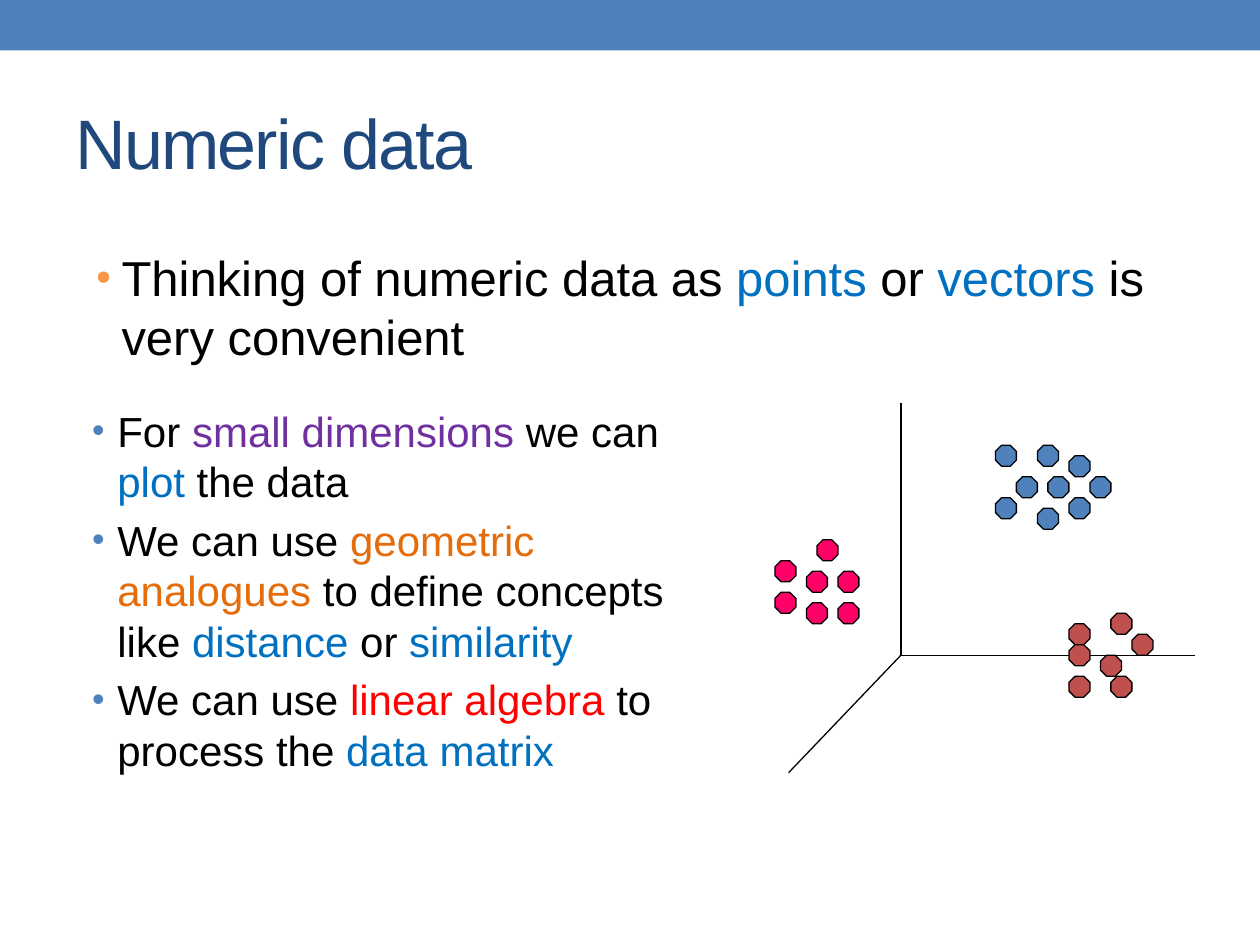
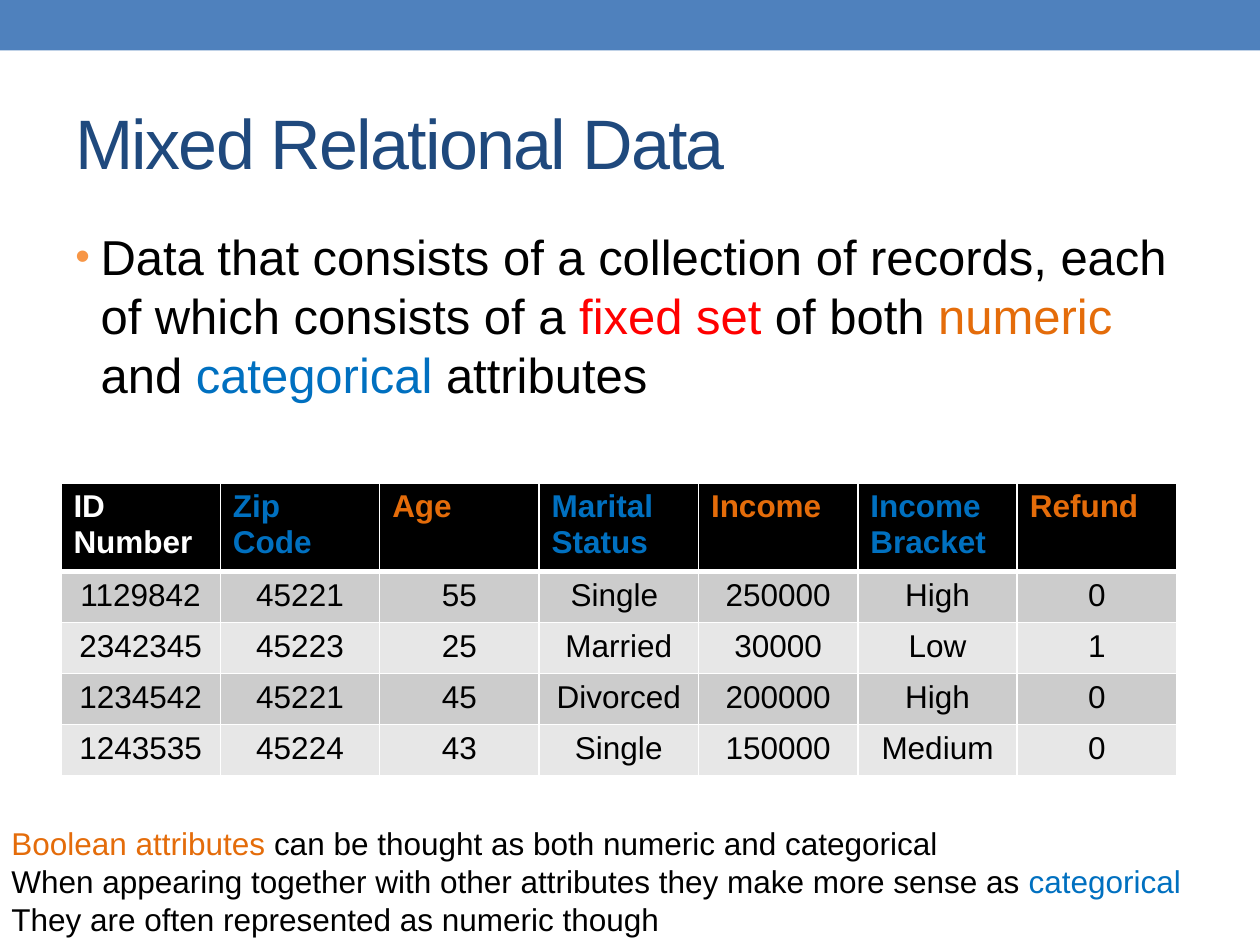
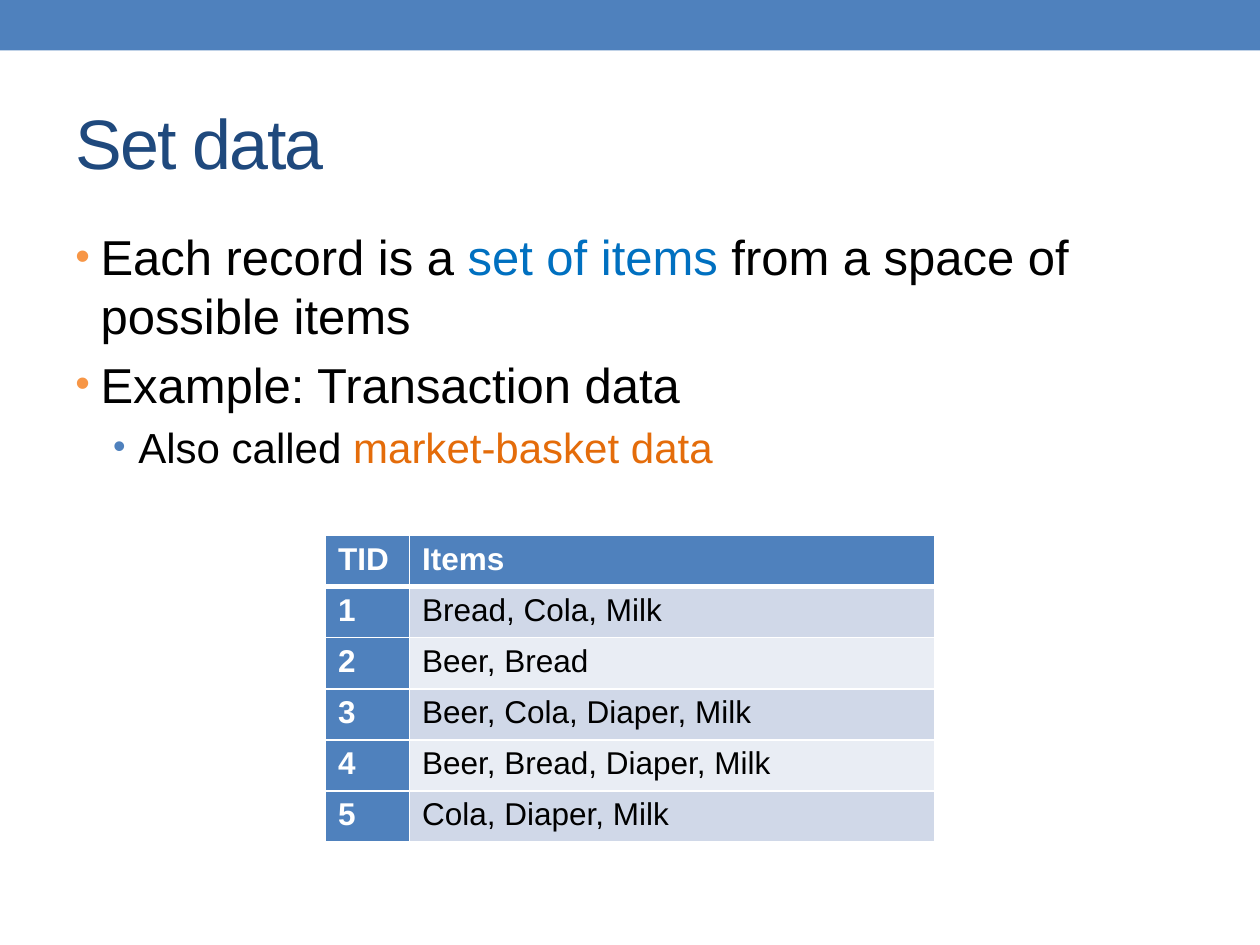
from dataclasses import dataclass
from typing import NamedTuple, Optional

from lxml.etree import SubElement
from pptx import Presentation
from pptx.dml.color import RGBColor
from pptx.enum.shapes import MSO_CONNECTOR, MSO_SHAPE
from pptx.enum.text import MSO_ANCHOR, PP_ALIGN
from pptx.oxml.ns import qn
from pptx.util import Emu, Inches, Pt

COLUMNS, ROWS = 120, 90
SLIDE_WIDTH, SLIDE_HEIGHT = Inches(10), Inches(7.5)


@dataclass(frozen=True)
class Theme:
    font: str = "Arial"
    title_size: int = 40
    body_size: int = 28
    detail_size: int = 24
    small_size: int = 18
    black: str = "000000"
    white: str = "FFFFFF"
    navy: str = "1F497D"
    steel: str = "4F81BD"
    blue: str = "0070C0"
    purple: str = "7030A0"
    orange: str = "E46C0A"
    amber: str = "F79646"
    red: str = "FF0000"
    pink: str = "FF0066"
    brick: str = "C0504D"
    grey_bands: tuple[str, str] = ("CCCCCC", "E7E7E7")
    blue_bands: tuple[str, str] = ("D0D8E8", "E9EDF4")


THEME = Theme()


class Frame(NamedTuple):
    """A rectangle in grid columns and rows."""
    left: float
    top: float
    width: float
    height: float


class Run(NamedTuple):
    text: str
    color: str = THEME.black


class Bullet(NamedTuple):
    color: str
    indent: float


class TextLine(NamedTuple):
    runs: list[Run]
    size: int
    bullet: Optional[Bullet] = None


class Cell(NamedTuple):
    text: str
    fill: str
    color: str = THEME.black
    bold: bool = False
    align: PP_ALIGN = PP_ALIGN.LEFT


class Cluster(NamedTuple):
    color: str
    left: float
    top: float
    offsets: list[tuple[int, int]]


BODY = Frame(6, 21, 108, 64)
DOT_SIZE = 2
CLUSTERS = [
    Cluster(THEME.steel, 94.8, 42.4, [(0, 0), (4, 0), (7, 1), (2, 3), (5, 3),
                                      (9, 3), (0, 5), (7, 5), (4, 6)]),
    Cluster(THEME.pink, 73.8, 51.4, [(4, 0), (0, 2), (3, 3), (6, 3), (0, 5),
                                     (3, 6), (6, 6)]),
    Cluster(THEME.brick, 101.8, 58.4, [(4, 0), (0, 1), (6, 2), (0, 3), (3, 4),
                                       (0, 6), (4, 6)]),
]
AXIS_ORIGIN = (85.8, 62.4)
AXIS_ENDS = [(85.8, 38.4), (113.8, 62.4), (75.1, 73.6)]

RECORD_HEADERS = [
    Run("ID Number", THEME.white), Run("Zip Code", THEME.blue),
    Run("Age", THEME.orange), Run("Marital Status", THEME.blue),
    Run("Income", THEME.orange), Run("Income Bracket", THEME.blue),
    Run("Refund", THEME.orange),
]
RECORDS = [
    ("1129842", "45221", "55", "Single ", "250000", "High", "0"),
    ("2342345", "45223", "25", "Married", "30000", "Low", "1"),
    ("1234542", "45221", "45", "Divorced", "200000", "High", "0"),
    ("1243535", "45224", "43", "Single", "150000", "Medium", "0"),
]
BASKETS = ["Bread, Cola, Milk", "Beer, Bread", "Beer, Cola, Diaper, Milk",
           "Beer, Bread, Diaper, Milk", "Cola, Diaper, Milk"]


def across(columns: float) -> Emu:
    return Emu(round(SLIDE_WIDTH * columns / COLUMNS))


def down(rows: float) -> Emu:
    return Emu(round(SLIDE_HEIGHT * rows / ROWS))


def place(frame: Frame) -> tuple[Emu, Emu, Emu, Emu]:
    return (across(frame.left), down(frame.top),
            across(frame.width), down(frame.height))


def main_point(*runs: Run) -> TextLine:
    return TextLine(list(runs), THEME.body_size, Bullet(THEME.amber, 0.2))


def detail(*runs: Run) -> TextLine:
    return TextLine(list(runs), THEME.detail_size, Bullet(THEME.steel, 0.5))


def note(*runs: Run) -> TextLine:
    return TextLine(list(runs), THEME.small_size)


def add_run(paragraph, run: Run, size: int, bold: bool = False):
    text_run = paragraph.add_run()
    text_run.text = run.text
    for name, value in {"name": THEME.font, "size": Pt(size), "bold": bold}.items():
        setattr(text_run.font, name, value)
    text_run.font.color.rgb = RGBColor.from_string(run.color)
    return text_run


def set_bullet(paragraph, bullet: Bullet) -> None:
    properties = paragraph._p.get_or_add_pPr()
    properties.set("marL", str(Inches(bullet.indent)))
    properties.set("indent", str(-Inches(0.2)))
    color = SubElement(properties, qn("a:buClr"))
    SubElement(color, qn("a:srgbClr"), val=bullet.color)
    SubElement(properties, qn("a:buSzPct"), val="85000")
    SubElement(properties, qn("a:buFont"), typeface=THEME.font)
    SubElement(properties, qn("a:buChar"), char="•")


def add_text(slide, frame: Frame, lines: list[TextLine], wrap: bool = True):
    text_frame = slide.shapes.add_textbox(*place(frame)).text_frame
    text_frame.word_wrap = wrap
    for index, line in enumerate(lines):
        paragraph = text_frame.add_paragraph() if index else text_frame.paragraphs[0]
        if line.bullet:
            paragraph.space_before = Pt(0.2 * line.size)
            set_bullet(paragraph, line.bullet)
        for run in line.runs:
            add_run(paragraph, run, line.size)
    return text_frame


def add_titled_slide(presentation, title: str):
    slide = presentation.slides.add_slide(presentation.slide_layouts[6])
    band = slide.shapes.add_shape(MSO_SHAPE.RECTANGLE, *place(Frame(0, 0, COLUMNS, 4.8)))
    band.shadow.inherit = False
    band.fill.solid()
    band.fill.fore_color.rgb = RGBColor.from_string(THEME.steel)
    band.line.fill.background()
    heading = TextLine([Run(title, THEME.navy)], THEME.title_size)
    text_frame = add_text(slide, Frame(6, 7, 108, 13), [heading])
    text_frame.vertical_anchor = MSO_ANCHOR.MIDDLE
    text_frame.paragraphs[0].runs[0].font._element.set("spc", "-100")
    return slide


def set_black_line(shape) -> None:
    shape.line.color.rgb = RGBColor.from_string(THEME.black)
    shape.line.width = Pt(0.75)


def add_axis(group, end: tuple[float, float]) -> None:
    axis = group.shapes.add_connector(
        MSO_CONNECTOR.STRAIGHT, across(AXIS_ORIGIN[0]), down(AXIS_ORIGIN[1]),
        across(end[0]), down(end[1]))
    set_black_line(axis)
    SubElement(axis._element.spPr, qn("a:effectLst"))


def add_cluster(group, cluster: Cluster) -> None:
    for column, row in cluster.offsets:
        frame = Frame(cluster.left + column, cluster.top + row, DOT_SIZE, DOT_SIZE)
        dot = group.shapes.add_shape(MSO_SHAPE.OCTAGON, *place(frame))
        dot.shadow.inherit = False
        dot.fill.solid()
        dot.fill.fore_color.rgb = RGBColor.from_string(cluster.color)
        set_black_line(dot)


def set_borders(cell, top: float, bottom: float) -> None:
    properties = cell._tc.get_or_add_tcPr()
    widths = {"a:lnL": 1, "a:lnR": 1, "a:lnT": top, "a:lnB": bottom}
    for index, (tag, width) in enumerate(widths.items()):
        border = SubElement(properties, qn(tag), w=str(Pt(width)))
        fill = SubElement(border, qn("a:solidFill"))
        SubElement(fill, qn("a:srgbClr"), val=THEME.white)
        properties.insert(index, border)


def add_grid_table(slide, left: float, top: float, widths: list[float],
                   rows: list[list[Cell]]) -> None:
    """Draw a table whose header row is ruled off by a thicker line."""
    row_height = 4.87
    frame = Frame(left, top, sum(widths), row_height * len(rows))
    table = slide.shapes.add_table(len(rows), len(widths), *place(frame)).table
    table.first_row = table.horz_banding = False
    for column, width in zip(table.columns, widths):
        column.width = across(width)
    for row_index, row in enumerate(rows):
        table.rows[row_index].height = down(row_height)
        for column_index, content in enumerate(row):
            cell = table.cell(row_index, column_index)
            cell.fill.solid()
            cell.fill.fore_color.rgb = RGBColor.from_string(content.fill)
            set_borders(cell, top=3 if row_index == 1 else 1,
                        bottom=3 if row_index == 0 else 1)
            paragraph = cell.text_frame.paragraphs[0]
            paragraph.alignment = content.align
            add_run(paragraph, Run(content.text, content.color),
                    THEME.small_size, content.bold)


def build_numeric_data(presentation) -> None:
    slide = add_titled_slide(presentation, "Numeric data")
    add_text(slide, Frame(4, 38, 65, 46), [
        detail(Run("For "), Run("small dimensions ", THEME.purple), Run("we can "),
               Run("plot", THEME.blue), Run(" the data")),
        detail(Run("We can use "), Run("geometric analogues", THEME.orange),
               Run(" to define concepts like "), Run("distance", THEME.blue),
               Run(" or "), Run("similarity", THEME.blue)),
        detail(Run("We can use "), Run("linear algebra ", THEME.red),
               Run("to process the "), Run("data matrix", THEME.blue)),
    ])
    plot = slide.shapes.add_group_shape()
    for end in AXIS_ENDS:
        add_axis(plot, end)
    for cluster in CLUSTERS:
        add_cluster(plot, cluster)
    add_text(slide, Frame(8, 23, 108, 13.8), [
        main_point(Run("Thinking of numeric data as "), Run("points", THEME.blue),
                   Run(" or "), Run("vectors", THEME.blue),
                   Run(" is very convenient")),
    ])


def build_mixed_data(presentation) -> None:
    slide = add_titled_slide(presentation, "Mixed Relational Data")
    add_text(slide, BODY, [
        main_point(Run("Data that consists of a collection of records, each of "
                       "which consists of a "),
                   Run("fixed set ", THEME.red), Run("of both "),
                   Run("numeric", THEME.orange), Run(" and "),
                   Run("categorical ", THEME.blue), Run("attributes")),
    ])
    header = [Cell(run.text, THEME.black, run.color, bold=True) for run in RECORD_HEADERS]
    records = [[Cell(value, THEME.grey_bands[index % 2], align=PP_ALIGN.CENTER)
                for value in record] for index, record in enumerate(RECORDS)]
    add_grid_table(slide, 5.8, 46, [15.18] * len(header), [header, *records])
    add_text(slide, Frame(-0.1, 77.9, 114.8, 12.1), [
        note(Run("Boolean attributes ", THEME.orange),
             Run("can be thought as both numeric and categorical")),
        note(Run("When appearing together with other attributes they make more sense as "),
             Run("categorical", THEME.blue)),
        note(Run("They are often represented as numeric though")),
    ], wrap=False)


def build_set_data(presentation) -> None:
    slide = add_titled_slide(presentation, "Set data")
    add_text(slide, BODY, [
        main_point(Run("Each record is a "), Run("set of items ", THEME.blue),
                   Run("from a space of possible items")),
        main_point(Run("Example: Transaction data")),
        detail(Run("Also called "), Run("market-basket data", THEME.orange)),
    ])

    def heading(text: str) -> Cell:
        return Cell(text, THEME.steel, THEME.white, bold=True)

    baskets = [[heading(str(index + 1)), Cell(items, THEME.blue_bands[index % 2])]
               for index, items in enumerate(BASKETS)]
    add_grid_table(slide, 31, 51, [8, 50],
                   [[heading("TID"), heading("Items")], *baskets])


def main() -> None:
    presentation = Presentation()
    presentation.slide_width, presentation.slide_height = SLIDE_WIDTH, SLIDE_HEIGHT
    build_numeric_data(presentation)
    build_mixed_data(presentation)
    build_set_data(presentation)
    presentation.save("out.pptx")


if __name__ == "__main__":
    main()
